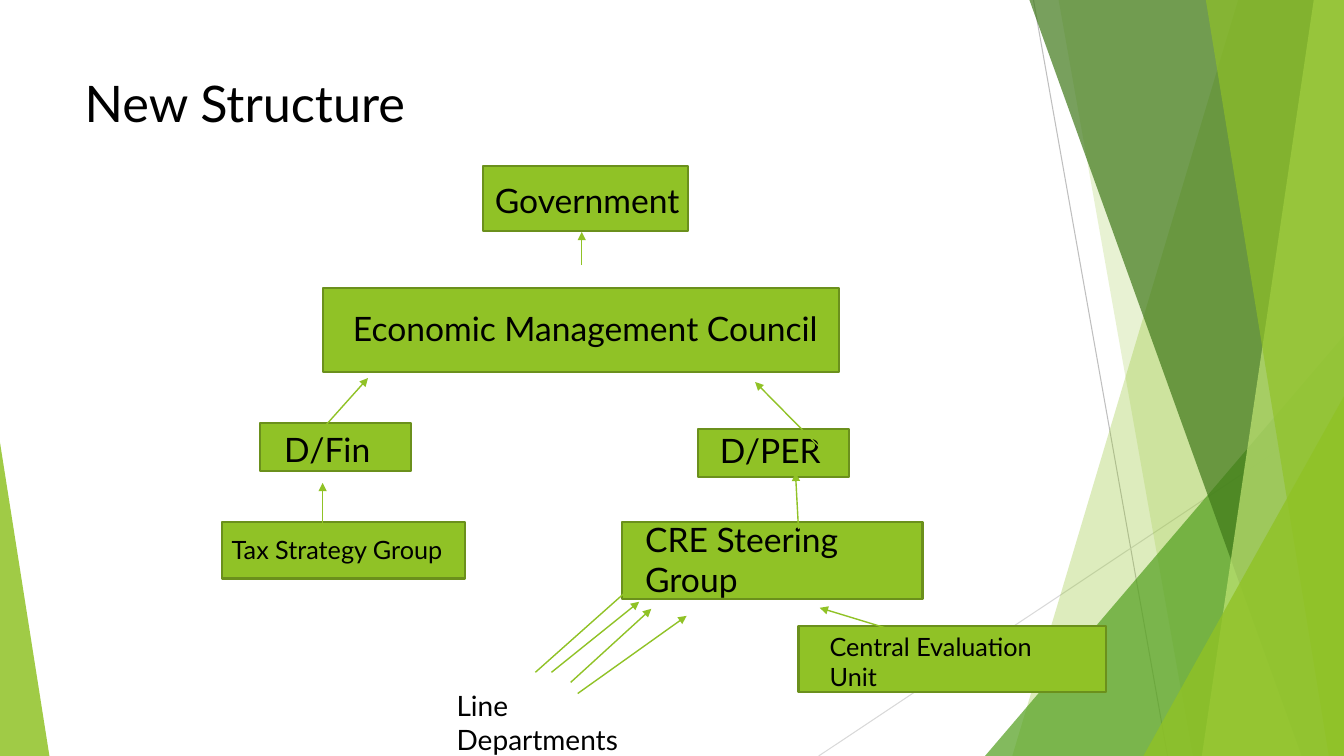
from dataclasses import dataclass

import lxml.etree
import pptx
import pptx.dml.color
import pptx.enum.shapes
import pptx.enum.text
import pptx.oxml.ns
import pptx.util

RGBColor = pptx.dml.color.RGBColor
Inches = pptx.util.Inches
Pt = pptx.util.Pt
qn = pptx.oxml.ns.qn
Kind = pptx.enum.shapes.MSO_SHAPE
Align = pptx.enum.text.PP_ALIGN

BLACK = RGBColor(0x00, 0x00, 0x00)
LIME = RGBColor(0x90, 0xC2, 0x26)
OLIVE = RGBColor(0x6B, 0x90, 0x1C)
GREEN = RGBColor(0x54, 0xA0, 0x21)
FOREST = RGBColor(0x3F, 0x78, 0x19)
PALE = RGBColor(0xC0, 0xE4, 0x74)
SILVER = RGBColor(0xBF, 0xBF, 0xBF)
MIST = RGBColor(0xD9, 0xD9, 0xD9)
FONT = "Lato"
WIDE, HIGH = 13.33, 7.5


@dataclass
class Band:
    top: float
    base: float
    fill: RGBColor
    alpha: int


@dataclass
class Wedge:
    left: float
    top: float
    width: float
    peak: float
    fill: RGBColor
    alpha: int


@dataclass
class Box:
    left: float
    top: float
    width: float
    height: float


@dataclass
class Label:
    text: str
    left: float
    top: float
    width: float
    size: int = 24
    align: Align = Align.LEFT


@dataclass
class Line:
    x1: float
    y1: float
    x2: float
    y2: float


DECOR = [
    Band(12.28, 10.04, LIME, 30),
    Band(10.5, 11.83, LIME, 20),
    Wedge(9.77, 3.33, 3.56, 1, GREEN, 72),
    Band(10.21, 12.91, FOREST, 70),
    Band(13.03, 11.92, PALE, 70),
    Band(11.96, 13.18, LIME, 65),
    Wedge(11.34, 3.93, 1.99, 1, LIME, 80),
    Wedge(0, 4.39, 0.49, 0, LIME, 85),
]
BOXES = [
    Box(7.92, 6.21, 3.05, 0.66),
    Box(6.17, 5.18, 2.98, 0.76),
    Box(2.2, 5.18, 2.41, 0.56),
    Box(2.58, 4.2, 1.5, 0.47),
    Box(6.92, 4.26, 1.5, 0.47),
    Box(3.2, 2.86, 5.12, 0.83),
    Box(4.79, 1.65, 2.03, 0.64),
]
LABELS = [
    Label("Government", 4.81, 1.74, 2.11),
    Label("Economic Management Council", 3.14, 3.01, 5.33, align=Align.CENTER),
    Label("D/Fin", 2.72, 4.21, 1.08),
    Label("Tax Strategy Group", 2.2, 5.25, 2.41, 18),
    Label("D/PER", 7.04, 4.22, 3.48),
    Label("CRE Steering Group", 6.3, 5.1, 3.09),
    Label("Line Departments", 4.43, 6.78, 2.28, 20),
    Label("Central Evaluation Unit", 8.13, 6.21, 2.55, 18),
]
ARROWS = [
    Line(5.77, 2.63, 5.77, 2.3),
    Line(8.22, 4.53, 7.49, 3.79),
    Line(3.23, 4.22, 3.65, 3.75),
    Line(3.2, 5.25, 3.2, 4.79),
    Line(7.92, 5.25, 7.89, 4.69),
    Line(9.08, 6.32, 8.13, 6.03),
    Line(5.31, 6.67, 6.31, 5.78),
    Line(5.66, 6.77, 6.46, 6.04),
    Line(5.47, 6.67, 6.34, 5.97),
    Line(5.73, 6.88, 6.81, 6.11),
]


def paint(shape, color: RGBColor, alpha: int = 100) -> None:
    shape.shadow.inherit = False
    shape.fill.solid()
    shape.fill.fore_color.rgb = color
    if alpha < 100:
        tint = shape.fill._xPr.find(".//" + qn("a:srgbClr"))
        lxml.etree.SubElement(tint, qn("a:alpha")).set("val", str(alpha * 1000))


def style(frame, size: int, align: Align) -> None:
    for para in frame.paragraphs:
        para.alignment = align
        for run in para.runs:
            run.font.name = FONT
            run.font.size = Pt(size)
            run.font.color.rgb = BLACK


def place(shape, left: float, top: float, width: float, height: float) -> None:
    shape.left, shape.top = Inches(left), Inches(top)
    shape.width, shape.height = Inches(width), Inches(height)


def draw_band(shapes, band: Band) -> None:
    pen = shapes.build_freeform(Inches(band.top), 0, scale=1.0)
    ends = [(WIDE, 0), (WIDE, HIGH), (band.base, HIGH)]
    pen.add_line_segments([(Inches(x), Inches(y)) for x, y in ends])
    shape = pen.convert_to_shape()
    paint(shape, band.fill, band.alpha)
    shape.line.fill.background()


def draw_wedge(shapes, wedge: Wedge) -> None:
    shape = shapes.add_shape(Kind.ISOSCELES_TRIANGLE, 0, 0, 0, 0)
    place(shape, wedge.left, wedge.top, wedge.width, HIGH - wedge.top)
    shape.adjustments[0] = wedge.peak
    paint(shape, wedge.fill, wedge.alpha)
    shape.line.fill.background()


def draw_box(shapes, box: Box) -> None:
    shape = shapes.add_shape(Kind.RECTANGLE, 0, 0, 0, 0)
    place(shape, box.left, box.top, box.width, box.height)
    paint(shape, LIME)
    shape.line.color.rgb = OLIVE
    shape.line.width = Pt(1.5)


def draw_label(shapes, label: Label) -> None:
    shape = shapes.add_textbox(0, 0, 0, 0)
    place(shape, label.left, label.top, label.width, label.size / 60 + 0.1)
    frame = shape.text_frame
    frame.word_wrap = True
    frame.auto_size = pptx.enum.text.MSO_AUTO_SIZE.SHAPE_TO_FIT_TEXT
    frame.text = label.text
    style(frame, label.size, label.align)


def draw_line(shapes, line: Line, color: RGBColor, width: float, head: bool = False) -> None:
    ends = [Inches(n) for n in (line.x1, line.y1, line.x2, line.y2)]
    link = shapes.add_connector(pptx.enum.shapes.MSO_CONNECTOR.STRAIGHT, *ends)
    link.line.color.rgb = color
    link.line.width = Pt(width)
    if head:
        tip = lxml.etree.SubElement(link.line._get_or_add_ln(), qn("a:tailEnd"))
        tip.set("type", "triangle")
    lxml.etree.SubElement(link._element.spPr, qn("a:effectLst"))


def main() -> None:
    deck = pptx.Presentation()
    deck.slide_width, deck.slide_height = Inches(WIDE), Inches(HIGH)
    slide = deck.slides.add_slide(deck.slide_layouts[5])
    shapes = slide.shapes

    title = shapes.title
    place(title, 0.74, 0.67, 9.4, 1.44)
    title.text_frame.text = "New Structure"
    title.text_frame.vertical_anchor = pptx.enum.text.MSO_ANCHOR.TOP
    style(title.text_frame, 36, Align.LEFT)

    draw_line(shapes, Line(10.25, 0, 11.58, HIGH), SILVER, 0.75)
    draw_line(shapes, Line(WIDE, 4.03, 8.12, HIGH), MIST, 0.75)
    for item in DECOR:
        if isinstance(item, Band):
            draw_band(shapes, item)
        else:
            draw_wedge(shapes, item)
    for box in BOXES:
        draw_box(shapes, box)
    for label in LABELS:
        draw_label(shapes, label)
    for arrow in ARROWS:
        draw_line(shapes, arrow, LIME, 1, head=True)
    deck.save("out.pptx")


if __name__ == "__main__":
    main()
